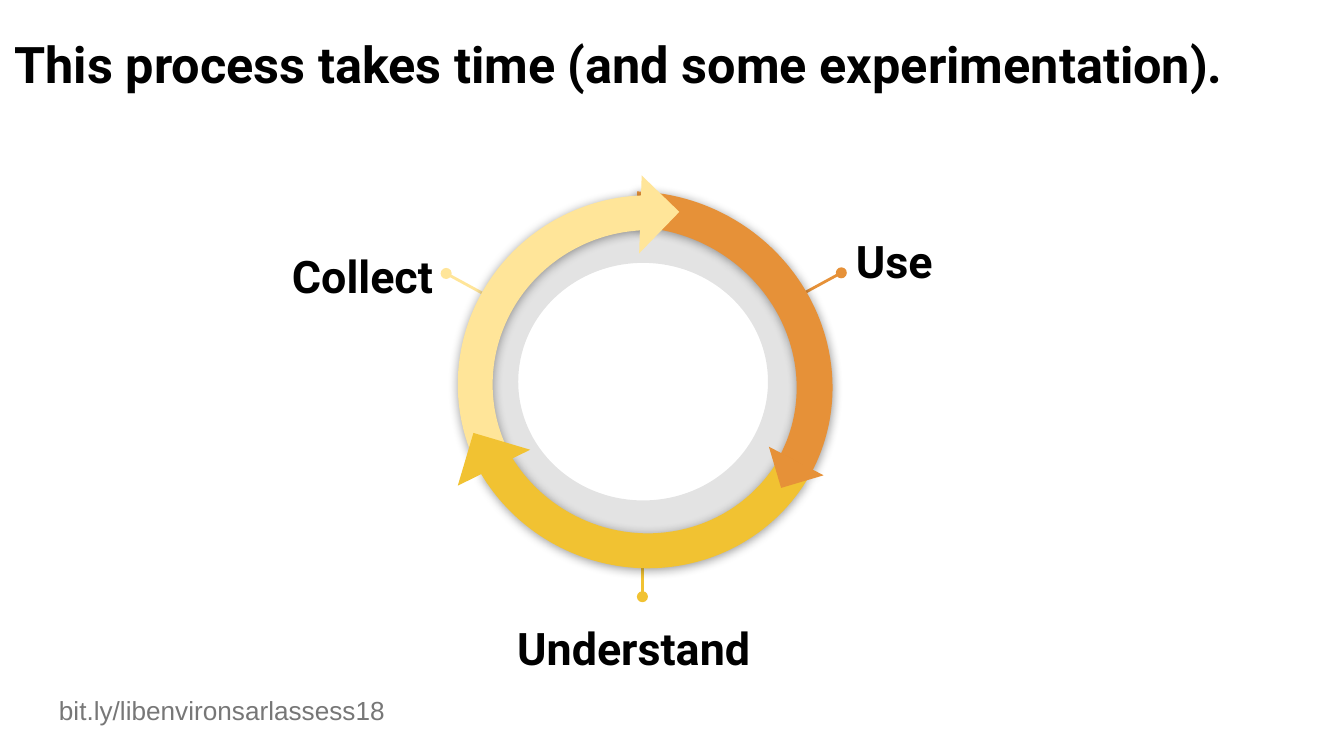
from dataclasses import dataclass
from typing import Optional

from lxml.etree import SubElement
from pptx import Presentation
from pptx.dml.color import RGBColor
from pptx.enum.shapes import MSO_CONNECTOR, MSO_SHAPE
from pptx.enum.text import MSO_ANCHOR, PP_ALIGN
from pptx.oxml.ns import qn
from pptx.util import Inches, Pt

COLORS = {
    "black": "000000",
    "gray": "777777",
    "orange": "E69138",
    "cream": "FFE599",
    "gold": "F1C232",
}


@dataclass
class Box:
    left: float
    top: float
    width: float
    height: float

    def lengths(self) -> tuple:
        return tuple(Inches(v) for v in (self.left, self.top, self.width, self.height))


@dataclass
class Label:
    text: str
    box: Box
    size: float
    align: PP_ALIGN = PP_ALIGN.LEFT
    spacing: float = 1.15
    font: str = "Roboto"
    color: str = "black"
    bold: bool = True


@dataclass
class Callout:
    label: Label
    start: tuple
    end: tuple
    color: str
    site: Optional[int] = None


@dataclass
class Part:
    preset: MSO_SHAPE
    box: Box
    rotation: float
    color: str
    adjustments: tuple = ()
    flipped: bool = False


def add_label(slide, label: Label):
    shape = slide.shapes.add_textbox(*label.box.lengths())
    frame = shape.text_frame
    frame.word_wrap = True
    frame.vertical_anchor = MSO_ANCHOR.TOP
    frame.margin_left = frame.margin_right = Inches(0.1)
    frame.margin_top = frame.margin_bottom = Inches(0.1)
    paragraph = frame.paragraphs[0]
    paragraph.alignment = label.align
    paragraph.line_spacing = label.spacing
    run = paragraph.add_run()
    run.text = label.text
    run.font.name = label.font
    run.font.size = Pt(label.size)
    run.font.bold = label.bold
    run.font.color.rgb = RGBColor.from_string(COLORS[label.color])
    return shape


def add_callout(slide, callout: Callout) -> None:
    text_box = add_label(slide, callout.label)
    points = [Inches(v) for v in callout.start + callout.end]
    connector = slide.shapes.add_connector(MSO_CONNECTOR.STRAIGHT, *points)
    if callout.site is not None:
        connector.begin_connect(text_box, callout.site)
    connector.line.color.rgb = RGBColor.from_string(COLORS[callout.color])
    connector.line.width = Pt(1.5)
    SubElement(connector.line._get_or_add_ln(), qn("a:headEnd"), type="oval")
    SubElement(connector._element.spPr, qn("a:effectLst"))


def add_alpha(color_element, percent: int) -> None:
    SubElement(color_element, qn("a:alpha"), val=str(percent * 1000))


def add_soft_shadow(shape) -> None:
    effects = shape._element.spPr.find(qn("a:effectLst"))
    shadow = SubElement(effects, qn("a:outerShdw"), blurRad=str(Pt(5.6)),
                        dist=str(Pt(0.8)), dir="5400000", rotWithShape="0")
    add_alpha(SubElement(shadow, qn("a:srgbClr"), val=COLORS["black"]), 40)


def add_part(slide, part: Part):
    shape = slide.shapes.add_shape(part.preset, *part.box.lengths())
    shape.rotation = part.rotation
    for index, value in enumerate(part.adjustments):
        shape.adjustments[index] = value
    if part.flipped:
        shape._element.spPr.find(qn("a:xfrm")).set("flipH", "1")
    shape.fill.solid()
    shape.fill.fore_color.rgb = RGBColor.from_string(COLORS[part.color])
    shape.line.fill.background()
    shape.shadow.inherit = False
    if part.preset == MSO_SHAPE.BLOCK_ARC:
        add_soft_shadow(shape)
    return shape


TITLE = Label("This process takes time (and some experimentation).",
              Box(0.01, 0.15, 10.46, 0.63), 27, spacing=1.0)
FOOTER = Label("bit.ly/libenvironsarlassess18", Box(0.34, 5.07, 5.69, 0.36), 14,
               spacing=1.0, font="Arial", color="gray", bold=False)
CALLOUTS = [
    Callout(Label("Collect", Box(1.73, 1.69, 1.59, 0.69), 24, PP_ALIGN.RIGHT),
            (3.32, 2.03), (3.77, 2.28), "cream", 3),
    Callout(Label("Use", Box(6.27, 1.58, 1.59, 0.69), 24),
            (6.26, 2.03), (5.8, 2.28), "orange"),
    Callout(Label("Understand", Box(3.29, 4.46, 2.85, 0.69), 24, PP_ALIGN.CENTER),
            (4.78, 4.44), (4.78, 3.97), "gold"),
]
RING = Part(MSO_SHAPE.DONUT, Box(3.44, 1.54, 2.69, 2.6), 0, "black", (0.16,))
ARROWS = [
    Part(MSO_SHAPE.BLOCK_ARC, Box(3.3, 1.44, 2.91, 2.78), 29.2, "orange",
         (144.14, 0.01, 0.096)),
    Part(MSO_SHAPE.BLOCK_ARC, Box(3.4, 1.46, 2.81, 2.76), 330.8, "cream",
         (143.49, 214.73, 0.094), True),
    Part(MSO_SHAPE.RIGHT_TRIANGLE, Box(4.57, 1.38, 0.39, 0.43), 224.1, "cream"),
    Part(MSO_SHAPE.BLOCK_ARC, Box(3.37, 1.45, 2.84, 2.77), 209.2, "gold",
         (143.16, 215.03, 0.094), True),
    Part(MSO_SHAPE.RIGHT_TRIANGLE, Box(5.76, 3.27, 0.33, 0.32), 343.5, "orange"),
    Part(MSO_SHAPE.RIGHT_TRIANGLE, Box(3.47, 3.26, 0.41, 0.44), 106.5, "gold"),
]


def main() -> None:
    presentation = Presentation()
    presentation.slide_width = Inches(10)
    presentation.slide_height = Inches(10) * 9 // 16
    slide = presentation.slides.add_slide(presentation.slide_layouts[6])
    add_label(slide, TITLE)
    ring = add_part(slide, RING)
    add_alpha(ring._element.spPr.find(qn("a:solidFill"))[0], 11)
    for callout in CALLOUTS:
        add_callout(slide, callout)
    for arrow in ARROWS:
        add_part(slide, arrow)
    add_label(slide, FOOTER)
    presentation.save("out.pptx")


if __name__ == "__main__":
    main()
